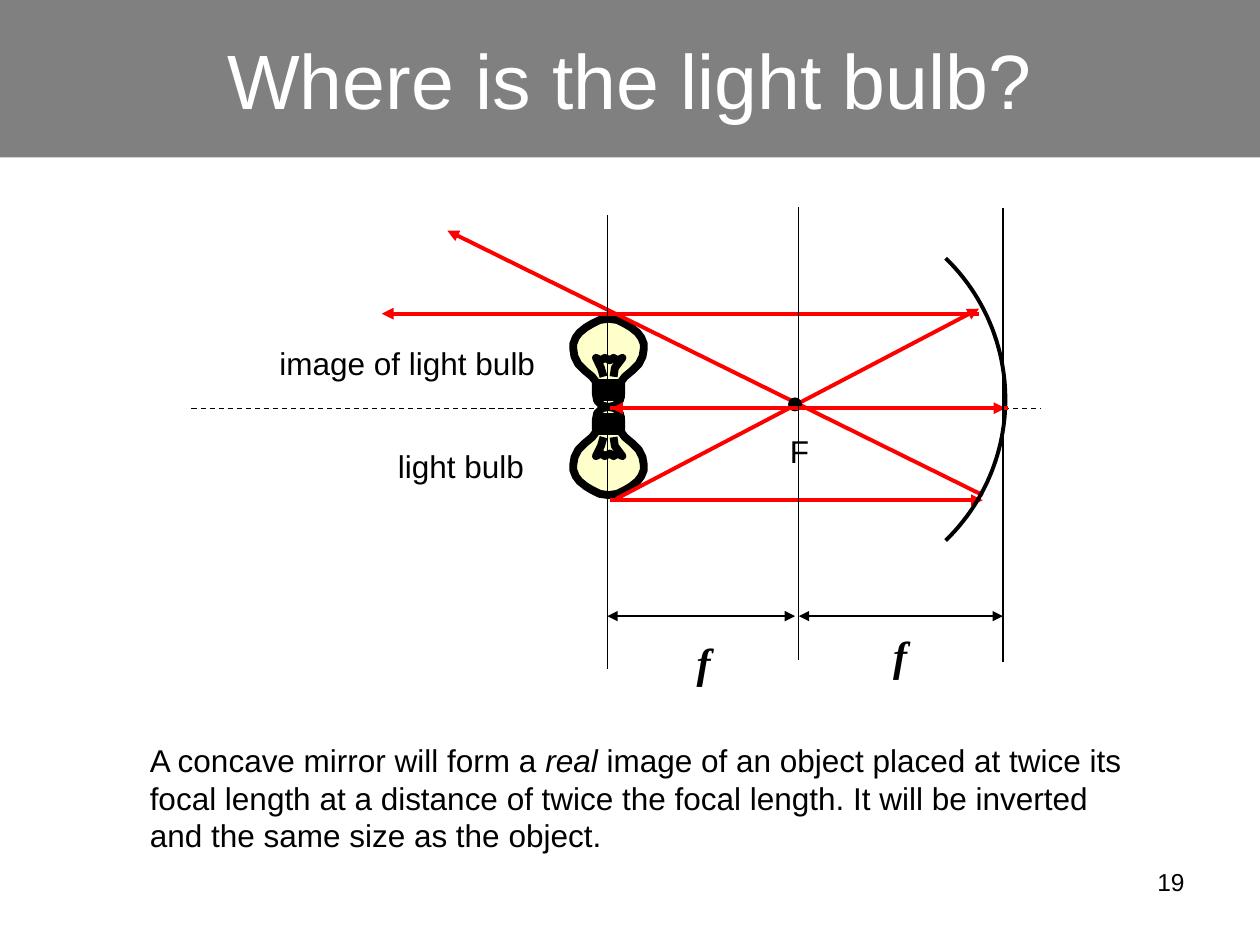
from math import asin, cos, sin
from lxml.etree import SubElement
from pptx import Presentation
from pptx.dml.color import RGBColor
from pptx.enum.dml import MSO_LINE
from pptx.enum.shapes import MSO_CONNECTOR, MSO_SHAPE
from pptx.enum.text import MSO_ANCHOR, PP_ALIGN
from pptx.oxml.ns import qn
from pptx.util import Inches, Pt

COLORS = {"black": "000000", "white": "FFFFFF", "band": "808080",
          "ray": "FF0000", "glass": "FFFFCC"}
BULB_HALF = [(0, 0), (0.05, 0.01), (0.09, 0.05), (0.1, 0.1), (0.1, 0.2),
             (0.13, 0.24), (0.19, 0.29), (0.24, 0.34), (0.27, 0.4),
             (0.28, 0.46), (0.28, 0.5), (0.26, 0.55), (0.23, 0.59),
             (0.18, 0.63), (0.13, 0.66), (0.07, 0.69), (0, 0.7)]
FILAMENT = [(-0.04, 0.24), (-0.06, 0.31), (-0.09, 0.37), (-0.1, 0.39),
            (-0.06, 0.37), (-0.03, 0.39), (0.01, 0.37), (0.04, 0.39),
            (0.07, 0.37), (0.11, 0.39), (0.05, 0.31), (0.04, 0.24)]
SOCKET = [(-0.09, 0.19), (0.1, 0.19), (0.1, 0.15), (-0.09, 0.15),
          (-0.09, 0.12), (0.1, 0.12), (0.1, 0.08), (-0.09, 0.08)]


def color(name):
    """Return the named colour."""
    return RGBColor.from_string(COLORS[name])


def write(tf, text, size=18, font="Arial", fill="black", bold=False,
          italic=False, align=PP_ALIGN.LEFT, wrap=False, anchor=MSO_ANCHOR.TOP):
    """Fill a text frame, one paragraph per line, with italics between asterisks."""
    tf.word_wrap = wrap
    tf.vertical_anchor = anchor
    for i, line in enumerate(text.split("\n")):
        p = tf.paragraphs[0] if i == 0 else tf.add_paragraph()
        p.alignment = align
        for j, part in enumerate(line.split("*")):
            r = p.add_run()
            r.text = part
            r.font.size = Pt(size)
            r.font.name = font
            r.font.bold = bold
            r.font.italic = italic or j % 2 == 1
            r.font.color.rgb = color(fill)


def add_text(s, box, text, **style):
    """Add a text box at a box given in inches."""
    write(s.shapes.add_textbox(*map(Inches, box)).text_frame, text, **style)


def add_preset(s, kind, box, fill):
    """Add a filled preset shape without shadow."""
    sp = s.shapes.add_shape(kind, *map(Inches, box))
    sp.shadow.inherit = False
    sp.fill.solid()
    sp.fill.fore_color.rgb = color(fill)
    return sp


def add_line(s, start, end, stroke="black", width=0.75, head=False, tail=False,
             dash=False):
    """Add a straight line with optional arrowheads."""
    c = s.shapes.add_connector(MSO_CONNECTOR.STRAIGHT,
                               *map(Inches, (*start, *end)))
    c.line.color.rgb = color(stroke)
    c.line.width = Pt(width)
    if dash:
        c.line.dash_style = MSO_LINE.DASH
    ln = c.line._get_or_add_ln()
    for tag, wanted in (("a:headEnd", head), ("a:tailEnd", tail)):
        if wanted:
            SubElement(ln, qn(tag), type="triangle")
    SubElement(c._element.spPr, qn("a:effectLst"))


def add_outline(s, contours, width, fill=None, close=False):
    """Add one freeform made of contours given in inches."""
    contours = [[(Inches(x), Inches(y)) for x, y in pts] for pts in contours]
    fb = s.shapes.build_freeform(*contours[0][0], scale=1.0)
    for i, pts in enumerate(contours):
        if i:
            fb.move_to(*pts[0])
        fb.add_line_segments(pts[1:], close=close)
    sp = fb.convert_to_shape()
    sp.shadow.inherit = False
    sp.line.color.rgb = color("black")
    sp.line.width = Pt(width)
    if fill:
        sp.fill.solid()
        sp.fill.fore_color.rgb = color(fill)
    else:
        sp.fill.background()


def add_bulb(s, x, y, up):
    """Draw a bulb from its base point, upright or inverted."""
    def place(pts):
        return [(x + dx, y + up * dy) for dx, dy in pts]

    mirrored = [(-dx, dy) for dx, dy in BULB_HALF[-2:0:-1]]
    add_outline(s, [place(BULB_HALF + mirrored)], 4.5, "glass", close=True)
    add_outline(s, [place(FILAMENT), place(SOCKET)], 4.5)


def add_mirror(s, x, y, radius, half_height):
    """Draw a circular arc whose rightmost point is at x, y."""
    half_angle = asin(half_height / radius)
    angles = [half_angle * i / 24 for i in range(-24, 25)]
    add_outline(s, [[(x + radius * (cos(a) - 1), y + radius * sin(a))
                     for a in angles]], 2.25)


def add_title(s, box, text):
    """Draw the title band."""
    sp = add_preset(s, MSO_SHAPE.RECTANGLE, box, "band")
    sp.line.fill.background()
    write(sp.text_frame, text, size=44, fill="white", align=PP_ALIGN.CENTER,
          wrap=True, anchor=MSO_ANCHOR.MIDDLE)


def add_diagram(s, box):
    """Draw the bulbs, mirror, rays and focal lengths inside the box."""
    left, top, width, _ = box
    axis = top + 1.64
    bulb, focus, mirror = left + 3.32, left + 4.84, left + 6.46

    def ray(x1, y1, x2, y2):
        add_line(s, (left + x1, top + y1), (left + x2, top + y2),
                 stroke="ray", width=2.25, tail=True)

    add_bulb(s, bulb + 0.01, axis - 0.01, -1)
    ray(6.27, 0.89, 1.53, 0.89)
    add_bulb(s, bulb + 0.01, axis - 0.01, 1)
    ray(3.34, 2.37, 6.3, 2.37)
    ray(6.3, 2.33, 2.05, 0.23)
    ray(3.39, 2.36, 6.27, 0.85)
    add_text(s, (left + 1.56, top + 1.9, 1.2, 0.4), "light bulb")
    add_text(s, (left + 0.62, top + 1.08, 2.23, 0.4), "image of light bulb")
    add_mirror(s, mirror + 0.02, axis - 0.07, 1.56, 1.12)
    add_line(s, (left + 0.02, axis), (left + width, axis), dash=True)
    add_text(s, (left + 4.67, top + 1.78, 0.35, 0.4), "F")
    dot = add_preset(s, MSO_SHAPE.OVAL, (focus - 0.08, axis - 0.08, 0.1, 0.1),
                     "black")
    dot.line.color.rgb = color("black")
    dot.line.width = Pt(0.75)
    ray(3.34, 1.64, 6.48, 1.64)
    ray(6.5, 1.64, 3.35, 1.64)

    for x, y in ((focus, 0.04), (bulb, 0.11), (mirror, 0.05)):
        add_line(s, (x, top + y), (x, top + y + 3.6))
    for x1, x2, x, y in ((bulb, focus - 0.03, 3.93, 3.4),
                         (focus, mirror, 5.49, 3.35)):
        add_line(s, (x1, top + 3.29), (x2, top + 3.29), head=True, tail=True)
        add_text(s, (left + x, top + y, 0.33, 0.5), "f", size=24,
                 font="Times New Roman", bold=True, italic=True, wrap=True)


def main():
    """Build and save the slide."""
    prs = Presentation()
    prs.slide_width, prs.slide_height = Inches(10), Inches(7.5)
    s = prs.slides.add_slide(prs.slide_layouts[6])
    add_text(s, (7.17, 6.83, 2.33, 0.52), "19", size=14,
             align=PP_ALIGN.RIGHT, wrap=True)
    add_title(s, (0, 0, 10, 1.25), "Where is the light bulb?")
    add_diagram(s, (1.5, 1.6, 6.76, 3.9))
    add_text(s, (1.09, 5.83, 7.92, 1),
             "A concave mirror will form a* real *image of an object placed at twice its\n"
             "focal length at a distance of twice the focal length. It will be inverted\n"
             "and the same size as the object.")
    prs.save("out.pptx")


if __name__ == "__main__":
    main()
